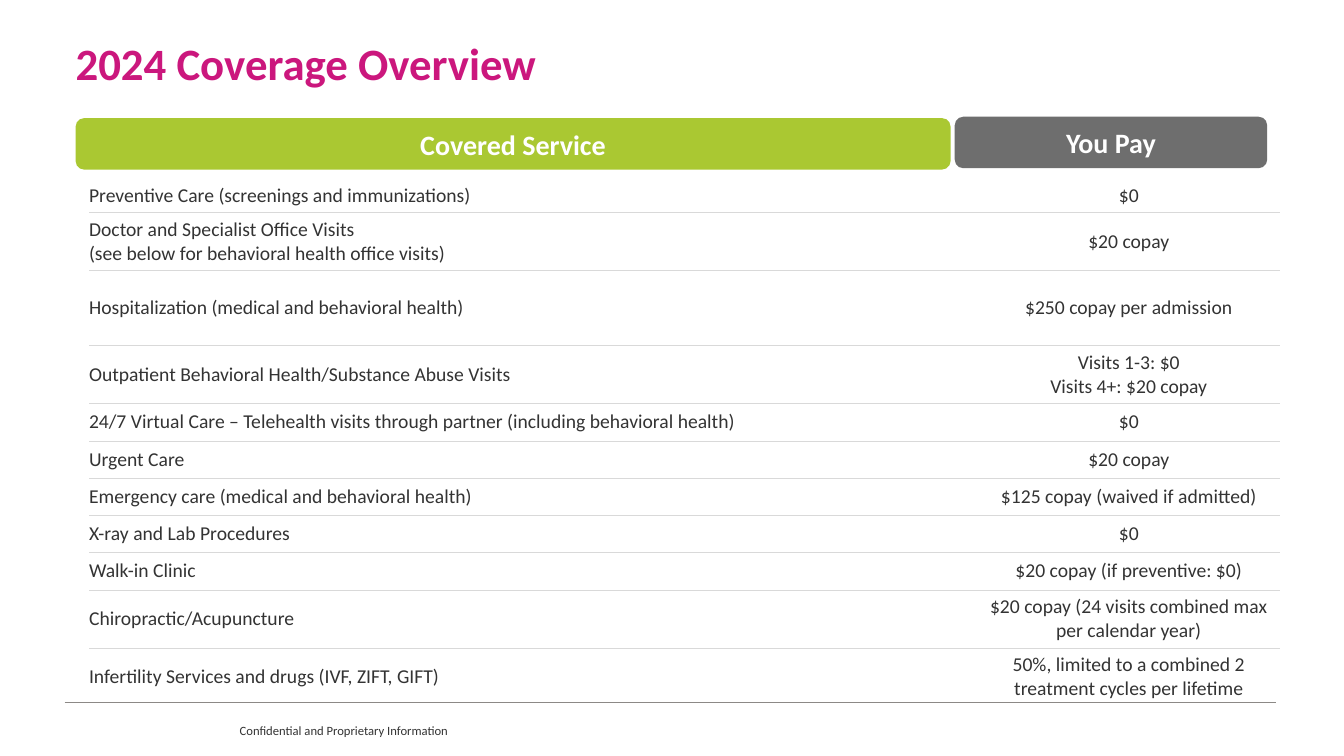
from dataclasses import dataclass

import pptx
import pptx.dml.color
import pptx.enum.shapes
import pptx.enum.text
import pptx.oxml
import pptx.oxml.ns
import pptx.presentation
import pptx.slide
import pptx.table
import pptx.text.text
import pptx.util

Pt = pptx.util.Pt
RGBColor = pptx.dml.color.RGBColor
Align = pptx.enum.text.PP_ALIGN
Anchor = pptx.enum.text.MSO_ANCHOR

FONT = "Calibri"
MAGENTA = RGBColor(0xCB, 0x17, 0x7D)
GREEN = RGBColor(0xAA, 0xC8, 0x32)
GRAY = RGBColor(0x6E, 0x6E, 0x6E)
RULE_GRAY = RGBColor(0x8C, 0x89, 0x86)
DIVIDER = RGBColor(0xD9, 0xD9, 0xD9)
INK = RGBColor(0x33, 0x33, 0x33)
WHITE = RGBColor(0xFF, 0xFF, 0xFF)

ONE_LINE = 26.6
TWO_LINES = 41.6


@dataclass(frozen=True)
class Coverage:
    service: str
    payment: str
    height: float = ONE_LINE


@dataclass(frozen=True)
class Heading:
    label: str
    left: float
    top: float
    width: float
    color: RGBColor


COVERAGES = [
    Coverage("Preventive Care (screenings and immunizations)", "$0", 24.4),
    Coverage(
        "Doctor and Specialist Office Visits\n(see below for behavioral health office visits)",
        "$20 copay",
        TWO_LINES,
    ),
    Coverage("Hospitalization (medical and behavioral health)", "$250 copay per admission", 53.4),
    Coverage(
        "Outpatient Behavioral Health/Substance Abuse Visits",
        "Visits 1-3: $0\nVisits 4+: $20 copay",
        TWO_LINES,
    ),
    Coverage(
        "24/7 Virtual Care – Telehealth visits through partner (including behavioral health)", "$0"
    ),
    Coverage("Urgent Care", "$20 copay"),
    Coverage("Emergency care (medical and behavioral health)", "$125 copay (waived if admitted)"),
    Coverage("X-ray and Lab Procedures", "$0"),
    Coverage("Walk-in Clinic", "$20 copay (if preventive: $0)"),
    Coverage(
        "Chiropractic/Acupuncture", "$20 copay (24 visits combined max per calendar year)", TWO_LINES
    ),
    Coverage(
        "Infertility Services and drugs (IVF, ZIFT, GIFT)",
        "50%, limited to a combined 2 treatment cycles per lifetime",
        TWO_LINES,
    ),
]
HEADINGS = [
    Heading("Covered Service", 54, 84.4, 625, GREEN),
    Heading("You Pay", 682, 83.4, 223.2, GRAY),
]
COLUMN_WIDTHS = (634.4, 216.6)


def write(
    frame: pptx.text.text.TextFrame,
    text: str,
    size: float,
    color: RGBColor,
    bold: bool = False,
    align: Align = Align.LEFT,
) -> None:
    for index, line in enumerate(text.split("\n")):
        paragraph = frame.paragraphs[0] if index == 0 else frame.add_paragraph()
        paragraph.alignment = align
        run = paragraph.add_run()
        run.text = line
        run.font.name = FONT
        run.font.size = Pt(size)
        run.font.bold = bold
        run.font.color.rgb = color


def clear_margins(frame: pptx.text.text.TextFrame) -> None:
    frame.margin_left = frame.margin_top = frame.margin_right = frame.margin_bottom = 0
    frame.vertical_anchor = Anchor.TOP
    frame.word_wrap = True


def set_borders(cell: pptx.table._Cell, top: bool, bottom: bool) -> None:
    properties = cell._tc.get_or_add_tcPr()
    sides = (("lnL", False), ("lnR", False), ("lnT", top), ("lnB", bottom))
    for position, (side, visible) in enumerate(sides):
        paint = f'<a:solidFill><a:srgbClr val="{DIVIDER}"/></a:solidFill>' if visible else "<a:noFill/>"
        border = pptx.oxml.parse_xml(
            f'<a:{side} {pptx.oxml.ns.nsdecls("a")} w="{Pt(0.25)}">{paint}</a:{side}>'
        )
        properties.insert(position, border)


def add_title(slide: pptx.slide.Slide) -> None:
    title = slide.shapes.title
    title.left, title.top, title.width, title.height = Pt(54), Pt(30.2), Pt(864.8), Pt(79.2)
    clear_margins(title.text_frame)
    write(title.text_frame, "2024 Coverage Overview", 32, MAGENTA, bold=True)
    title.text_frame.paragraphs[0].line_spacing = 0.9


def add_footer(slide: pptx.slide.Slide) -> None:
    rule = slide.shapes.add_connector(
        pptx.enum.shapes.MSO_CONNECTOR.STRAIGHT, Pt(46.2), Pt(502), Pt(911.4), Pt(502)
    )
    rule.line.color.rgb = RULE_GRAY
    rule.line.width = Pt(0.5)
    rule._element.spPr.append(
        pptx.oxml.parse_xml(f'<a:effectLst {pptx.oxml.ns.nsdecls("a")}/>')
    )
    notice = slide.shapes.add_textbox(Pt(171.2), Pt(516.2), Pt(324), Pt(18))
    clear_margins(notice.text_frame)
    write(notice.text_frame, "Confidential and Proprietary Information", 9, INK)


def add_coverage_table(slide: pptx.slide.Slide) -> None:
    table = slide.shapes.add_table(
        len(COVERAGES),
        len(COLUMN_WIDTHS),
        Pt(63.6),
        Pt(127.3),
        Pt(sum(COLUMN_WIDTHS)),
        Pt(sum(coverage.height for coverage in COVERAGES)),
    ).table
    table.first_row = table.horz_banding = False
    for column, width in zip(table.columns, COLUMN_WIDTHS):
        column.width = Pt(width)
    last = len(COVERAGES) - 1
    for index, coverage in enumerate(COVERAGES):
        table.rows[index].height = Pt(coverage.height)
        service, payment = table.cell(index, 0), table.cell(index, 1)
        service.margin_left = 0
        write(service.text_frame, coverage.service, 14, INK)
        write(payment.text_frame, coverage.payment, 14, INK, align=Align.CENTER)
        for cell in (service, payment):
            cell.vertical_anchor = Anchor.MIDDLE
            cell.fill.background()
            set_borders(cell, top=index > 0, bottom=index < last)


def add_heading(slide: pptx.slide.Slide, heading: Heading) -> None:
    banner = slide.shapes.add_shape(
        pptx.enum.shapes.MSO_SHAPE.ROUNDED_RECTANGLE,
        Pt(heading.left), Pt(heading.top), Pt(heading.width), Pt(36.8),
    )
    banner.shadow.inherit = False
    banner.fill.solid()
    banner.fill.fore_color.rgb = heading.color
    banner.line.fill.background()
    banner.text_frame.vertical_anchor = Anchor.MIDDLE
    write(banner.text_frame, heading.label, 20, WHITE, bold=True, align=Align.CENTER)


def main() -> None:
    presentation = pptx.Presentation()
    presentation.slide_width, presentation.slide_height = Pt(960), Pt(540)
    slide = presentation.slides.add_slide(presentation.slide_layouts.get_by_name("Title Only"))
    add_footer(slide)
    add_title(slide)
    add_coverage_table(slide)
    for heading in HEADINGS:
        add_heading(slide, heading)
    presentation.save("out.pptx")


if __name__ == "__main__":
    main()
